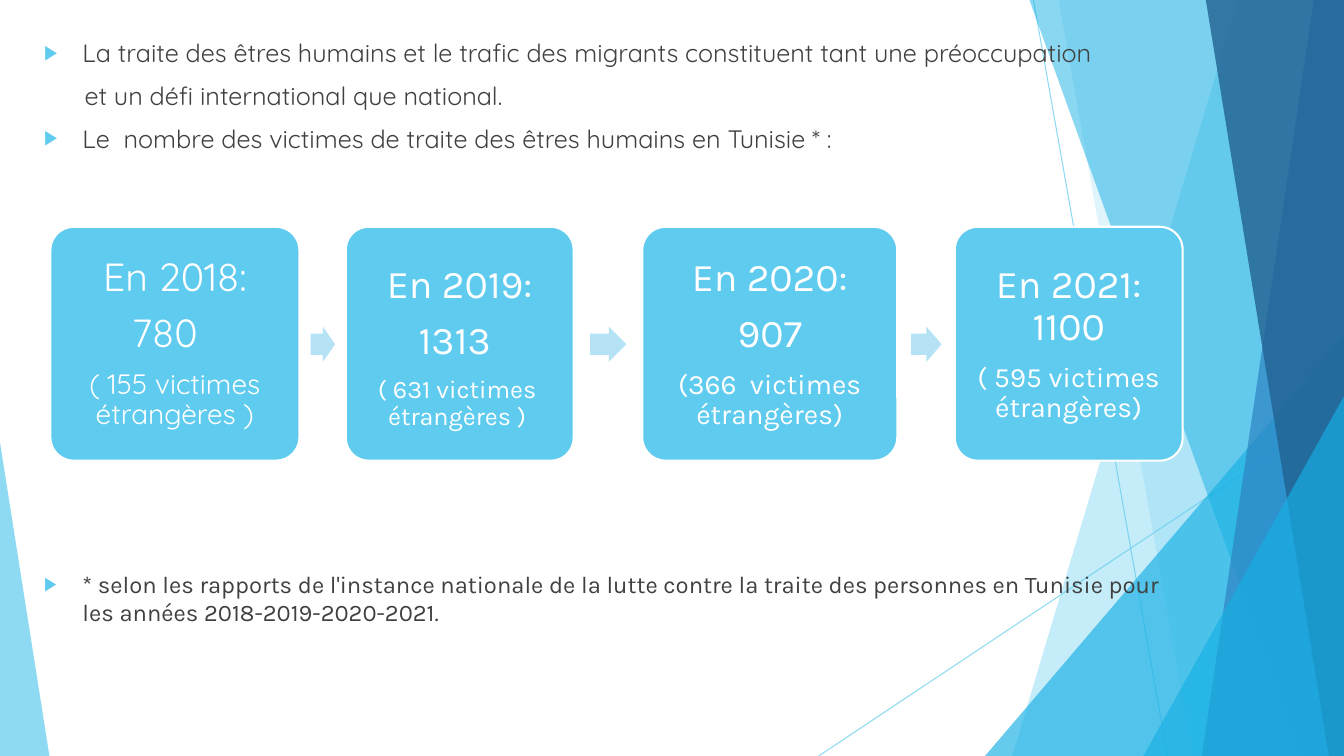
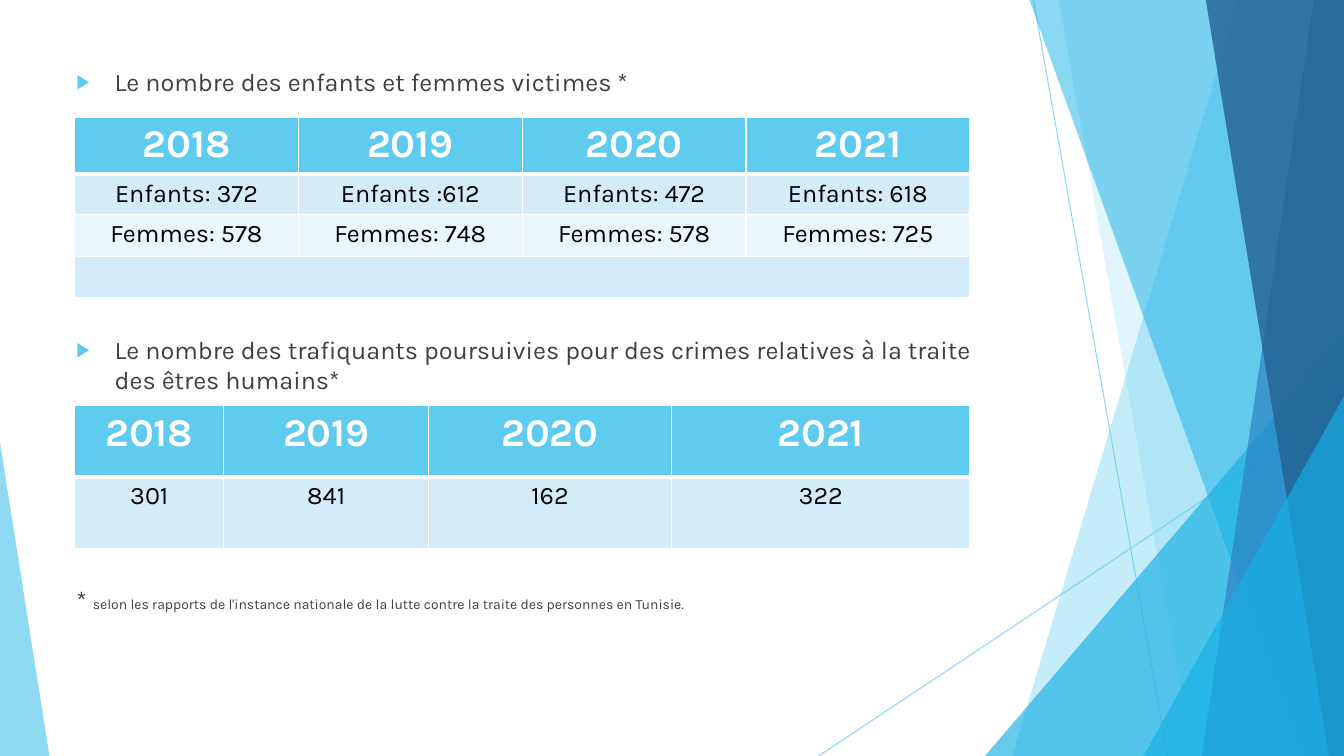
from pptx import Presentation
from pptx.dml.color import RGBColor
from pptx.enum.shapes import MSO_CONNECTOR as CONN, MSO_SHAPE as SHAPE
from pptx.enum.text import MSO_ANCHOR as ANCHOR, PP_ALIGN as ALIGN
from pptx.oxml.ns import qn
from pptx.util import Inches, Pt
from lxml.etree import SubElement

SKY, CYAN, BLUE, NAVY = "5FCBEF", "17B0E4", "2E83C3", "226292"
WHITE, BLACK, GREY = "FFFFFF", "000000", "404040"
PALE, PALER, ARROW = "D2ECF9", "EAF6FC", "B6E2F6"
KARLA, QUICKSAND = "Karla", "Quicksand"
HEIGHT = 7.5
RIGHT = 13.33
YEARS = ["2018", "2019", "2020", "2021"]


def rgb(hex_color):
    """Turn a hex string into a colour."""
    return RGBColor.from_string(hex_color)


def set_alpha(parent, percent):
    """Make the solid colour inside an element translucent."""
    color = next(parent.iter(qn("a:srgbClr")))
    SubElement(color, qn("a:alpha"), val=str(percent * 1000))


def set_font(font, name, size, color, bold=False):
    """Set the usual properties of a font."""
    font.name, font.size, font.bold = name, Pt(size), bold
    font.color.rgb = rgb(color)


def paint(sp, color, alpha=100):
    """Give a shape a plain fill without line or shadow."""
    sp.shadow.inherit = False
    sp.fill.solid()
    sp.fill.fore_color.rgb = rgb(color)
    sp.line.fill.background()
    if alpha < 100:
        set_alpha(sp.fill._xPr.find(qn("a:solidFill")), alpha)


def add_preset(s, kind, box, color, adjustments, alpha=100):
    """Add a painted preset shape."""
    sp = s.shapes.add_shape(kind, *map(Inches, box))
    for i, value in enumerate(adjustments):
        sp.adjustments[i] = value
    paint(sp, color, alpha)
    return sp


def add_thin_line(s, x1, y1, x2, y2):
    """Add a translucent hairline."""
    line = s.shapes.add_connector(CONN.STRAIGHT, *map(Inches, (x1, y1, x2, y2)))
    line.line.color.rgb = rgb(SKY)
    line.line.width = Pt(0.75)
    sp_pr = line._element.spPr
    set_alpha(sp_pr, 70)
    SubElement(sp_pr, qn("a:effectLst"))


def add_band(s, top_left, top_right, bottom_left, color, alpha):
    """Add a full-height band that ends at the right edge."""
    points = [(top_right, 0), (RIGHT, HEIGHT), (bottom_left, HEIGHT)]
    builder = s.shapes.build_freeform(Inches(top_left), 0)
    builder.add_line_segments([(Inches(x), Inches(y)) for x, y in points])
    paint(builder.convert_to_shape(), color, alpha)


def add_facets(s):
    """Draw the decoration that all slides share."""
    add_thin_line(s, 10.25, 0, 11.58, HEIGHT)
    add_thin_line(s, RIGHT, 4.03, 8.12, HEIGHT)
    add_band(s, 12.28, RIGHT, 10.04, SKY, 36)
    add_band(s, 10.5, RIGHT, 11.83, SKY, 20)
    add_preset(s, SHAPE.ISOSCELES_TRIANGLE, (9.77, 3.33, 3.56, 4.17), CYAN, [1], 66)
    add_band(s, 10.21, RIGHT, 12.91, CYAN, 50)
    add_band(s, 13.03, RIGHT, 11.92, BLUE, 70)
    add_band(s, 11.96, RIGHT, 13.18, NAVY, 80)
    add_preset(s, SHAPE.ISOSCELES_TRIANGLE, (11.34, 3.93, 1.99, 3.57), CYAN, [1], 66)
    add_preset(s, SHAPE.ISOSCELES_TRIANGLE, (0, 4.39, 0.49, 3.11), SKY, [0], 70)


def add_slide(prs):
    """Add a blank slide with the shared decoration."""
    s = prs.slides.add_slide(prs.slide_layouts[6])
    add_facets(s)
    return s


def add_text(s, box):
    """Add an empty wrapping text box and return its frame."""
    tf = s.shapes.add_textbox(*map(Inches, box)).text_frame
    tf.word_wrap = True
    return tf


def set_bullet(p):
    """Give a paragraph a hanging triangle bullet."""
    p_pr = p._p.get_or_add_pPr()
    p_pr.set("marL", str(Inches(0.38)))
    p_pr.set("indent", str(-Inches(0.38)))
    color = SubElement(p_pr, qn("a:buClr"))
    SubElement(color, qn("a:srgbClr"), val=SKY)
    SubElement(p_pr, qn("a:buSzPct"), val="80000")
    SubElement(p_pr, qn("a:buFont"), typeface="Arial")
    SubElement(p_pr, qn("a:buChar"), char="▶")


def add_points(s, box, lines, font, size):
    """Add body paragraphs, each with a bullet or a plain indent."""
    tf = add_text(s, box)
    for i, (text, bulleted) in enumerate(lines):
        p = tf.add_paragraph() if i else tf.paragraphs[0]
        p.text = text
        if i:
            p.space_before = Pt(9)
        if bulleted:
            set_bullet(p)
        else:
            p._p.get_or_add_pPr().set("marL", str(Inches(0.4)))
        set_font(p.font, font, size, GREY)


def add_card(s, left, width, font, lines, nudge):
    """Add a rounded card of centred (text, size, right margin) lines."""
    sp = add_preset(s, SHAPE.ROUNDED_RECTANGLE, (left, 2.25, width, 2.32), SKY, [0.1])
    sp.line.color.rgb = rgb(WHITE)
    sp.line.width = Pt(1.5)
    tf = sp.text_frame
    tf.word_wrap = True
    tf.vertical_anchor = ANCHOR.MIDDLE
    tf.margin_left = tf.margin_right = tf.margin_bottom = Inches(0.12)
    tf.margin_top = Inches(0.12 + nudge)
    for i, (text, size, margin) in enumerate(lines):
        p = tf.add_paragraph() if i else tf.paragraphs[0]
        p.text = text
        p.alignment = ALIGN.CENTER
        p.line_spacing = 0.9
        p.space_after = Pt(10 if i < len(lines) - 1 else 0)
        p._p.get_or_add_pPr().set("marR", str(Inches(margin)))
        set_font(p.font, font, size, WHITE)


def add_process(s, cards):
    """Add a row of cards with an arrow centred in each gap."""
    for i, (left, width, font, lines, nudge) in enumerate(cards):
        if i:
            end = cards[i - 1][0] + cards[i - 1][1]
            gap = left - end
            box = (end + gap * 0.24, 3.24, gap * 0.53, 0.35)
            add_preset(s, SHAPE.RIGHT_ARROW, box, ARROW, [0.6, 0.5])
        add_card(s, left, width, font, lines, nudge)


def style_cell(cell, fill, bottom):
    """Set the white borders and the fill of a table cell."""
    tc_pr = cell._tc.get_or_add_tcPr()
    for side, width in (("L", 1), ("R", 1), ("T", 1), ("B", bottom)):
        ln = SubElement(tc_pr, qn(f"a:ln{side}"), w=str(Pt(width)))
        SubElement(SubElement(ln, qn("a:solidFill")), qn("a:srgbClr"), val=WHITE)
    cell.fill.solid()
    cell.fill.fore_color.rgb = rgb(fill)


def add_year_table(s, top, widths, heights, rows):
    """Add a table with a header of years and banded rows."""
    box = (0.74, top, sum(widths), sum(heights))
    table = s.shapes.add_table(len(heights), len(widths), *map(Inches, box)).table
    for column, width in zip(table.columns, widths):
        column.width = Inches(width)
    for r, (height, texts) in enumerate(zip(heights, [YEARS] + rows)):
        table.rows[r].height = Inches(height)
        header = r == 0
        fill = SKY if header else PALE if r % 2 else PALER
        for c, text in enumerate(texts):
            cell = table.cell(r, c)
            style_cell(cell, fill, 3 if header else 1)
            p = cell.text_frame.paragraphs[0]
            p.text = text
            p.alignment = ALIGN.CENTER
            set_font(p.font, KARLA, 28 if header else 18, WHITE if header else BLACK, header)
    return table


def add_note(s, box, runs):
    """Add a paragraph of (text, size) runs."""
    p = add_text(s, box).paragraphs[0]
    for text, size in runs:
        r = p.add_run()
        r.text = text
        set_font(r.font, KARLA, size, GREY)


def build_victims(prs):
    """Build the slide on the number of victims."""
    s = add_slide(prs)
    add_points(s, (0.34, 0.32, 11.57, 1.4), [
        ("La traite des êtres humains et le trafic des migrants constituent tant une préoccupation", True),
        ("et un défi international que national.", False),
        ("Le  nombre des victimes de traite des êtres humains en Tunisie * :", True),
    ], QUICKSAND, 18)
    add_points(s, (0.34, 5.6, 11.57, 0.7), [
        ("* selon les rapports de l'instance nationale de la lutte contre la traite des "
         "personnes en Tunisie pour les années 2018-2019-2020-2021.", True),
    ], KARLA, 17)
    add_process(s, [
        (0.5, 2.47, QUICKSAND,
         [("En 2018:", 28, 0), ("780", 28, 0.2), ("( 155 victimes étrangères )", 20, 0)], 0),
        (3.43, 2.26, KARLA,
         [("En 2019:", 28, 0), ("1313", 28, 0.1), ("( 631 victimes étrangères )", 18, 0.05)], 0.08),
        (6.37, 2.53, KARLA,
         [("En 2020:", 28, 0), ("907", 28, 0), ("(366  victimes étrangères)", 20, 0)], 0),
        (9.47, 2.26, KARLA,
         [("En 2021: 1100", 28, 0), ("( 595 victimes étrangères)", 20, 0)], 0),
    ])


def build_tables(prs):
    """Build the slide on women, children and traffickers."""
    s = add_slide(prs)
    add_points(s, (0.66, 0.61, 9.4, 0.4),
               [("Le nombre des enfants et femmes victimes *", True)], KARLA, 18)
    add_points(s, (0.66, 3.27, 9.4, 0.7), [
        ("Le nombre des trafiquants poursuivies pour des crimes relatives à la traite "
         "des êtres humains*", True),
    ], KARLA, 18)
    add_note(s, (0.66, 5.75, 9.4, 0.4), [
        ("* ", 18),
        ("selon les rapports de l'instance nationale de la lutte contre la traite des "
         "personnes en Tunisie.", 10),
    ])
    table = add_year_table(s, 1.16, [2.22] * 4, [0.55, 0.4, 0.42, 0.4], [
        ["Enfants: 372", "Enfants :612", "Enfants: 472", "Enfants: 618"],
        ["Femmes: 578", "Femmes: 748", "Femmes: 578", "Femmes: 725"],
        [""] * 4,
    ])
    table.cell(3, 0).merge(table.cell(3, 3))
    add_year_table(s, 4.02, [1.48, 2.03, 2.41, 2.96], [0.71, 0.71],
                   [["301", "841", "162", "322"]])


def main():
    """Build and save the presentation."""
    prs = Presentation()
    prs.slide_width, prs.slide_height = Inches(RIGHT), Inches(HEIGHT)
    build_victims(prs)
    build_tables(prs)
    prs.save("out.pptx")


if __name__ == "__main__":
    main()
